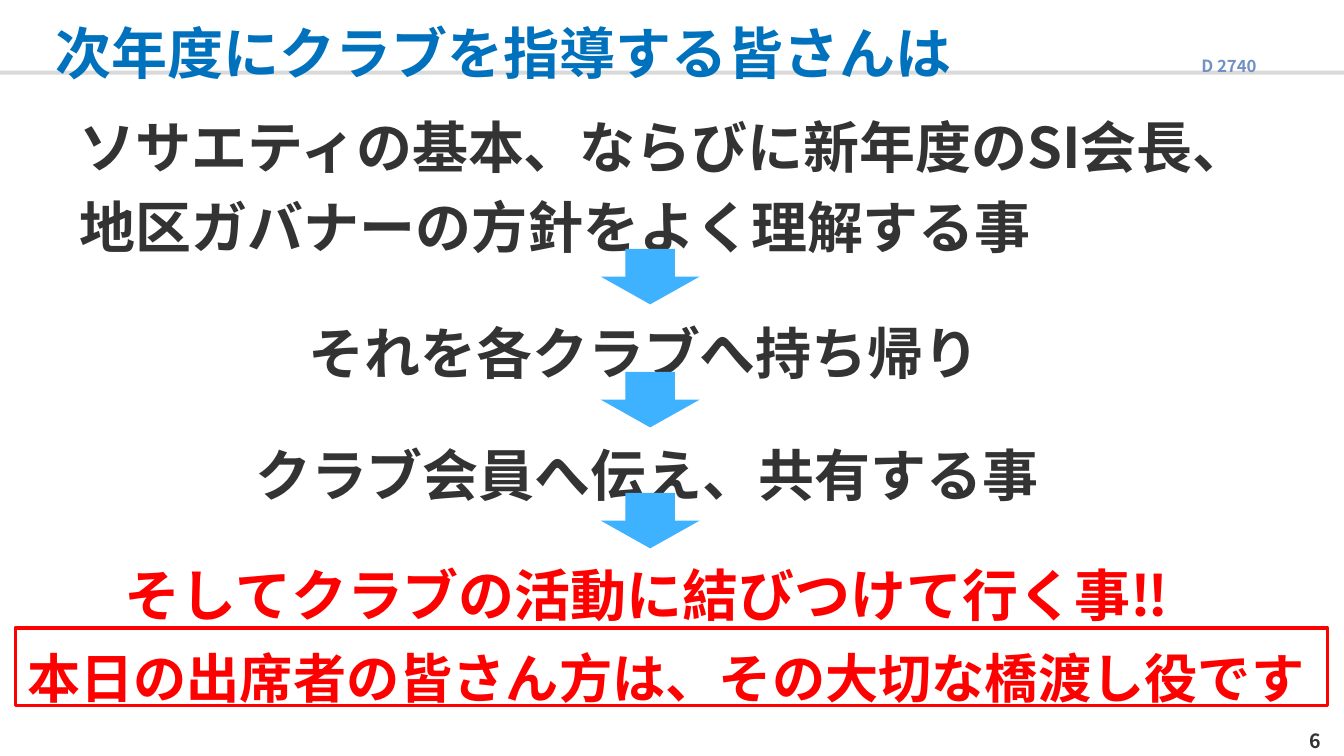
"""Build a slide of four steps joined by arrows, closed by a framed message."""
from lxml.etree import SubElement
from pptx import Presentation
from pptx.dml.color import RGBColor
from pptx.enum.shapes import MSO_SHAPE as Shape
from pptx.enum.text import MSO_ANCHOR as Anchor, PP_ALIGN as Align
from pptx.oxml.ns import qn
from pptx.util import Pt

FONT = "Noto Sans CJK JP"
BLUE, DARK, RED = "0071BC", "333333", "FF0000"
STEPS = [
    ((57, 67, 851, 116.6),
     ["ソサエティの基本、ならびに新年度のSI会長、", "地区ガバナーの方針をよく理解する事"], DARK),
    ((220.3, 214.6, 522.7, 55.4), ["それを各クラブへ持ち帰り"], DARK),
    ((182.2, 301.7, 599, 55.4), ["クラブ会員へ伝え、共有する事"], DARK),
    ((89.3, 387.4, 780.5, 55.4), ["そしてクラブの活動に結びつけて行く事‼"], RED),
]
ARROW_LEFT, ARROW_WIDTH, ARROW_HEIGHT = 429.1, 70.6, 39.6
ARROW_TOPS = [177.8, 265.7, 352.1]


def color(value):
    return RGBColor.from_string(value)


def add_run(paragraph, text, size, text_color):
    run = paragraph.add_run()
    run.text = text
    font = run.font
    font.size, font.bold, font.name = Pt(size), True, FONT
    font.color.rgb = color(text_color)
    SubElement(run._r.get_or_add_rPr(), qn("a:ea")).set("typeface", FONT)


def add_filled(slide, kind, box, fill):
    shape = slide.shapes.add_shape(kind, *map(Pt, box))
    shape.shadow.inherit = False
    shape.fill.solid()
    shape.fill.fore_color.rgb = color(fill)
    shape.line.fill.background()


def add_statement(slide, box, lines, size, text_color, indent=0, border=None):
    shape = slide.shapes.add_shape(Shape.ROUNDED_RECTANGLE, *map(Pt, box))
    shape.adjustments[0] = 0
    shape.shadow.inherit = False
    shape.fill.background()
    if border:
        shape.line.color.rgb = color(border)
        shape.line.width = Pt(2.25)
    else:
        shape.line.fill.background()
    frame = shape.text_frame
    frame.word_wrap = True
    frame.vertical_anchor = Anchor.TOP
    frame.margin_left, frame.margin_top = Pt(indent), Pt(3.5)
    frame.margin_right = frame.margin_bottom = 0
    for index, line in enumerate(lines):
        paragraph = frame.add_paragraph() if index else frame.paragraphs[0]
        paragraph.alignment = Align.JUSTIFY
        paragraph.line_spacing = Pt(size * 1.44)
        add_run(paragraph, line, size, text_color)


def add_label(slide, box, text, size, text_color, align, margins):
    frame = slide.shapes.add_textbox(*map(Pt, box)).text_frame
    frame.word_wrap = False
    frame.margin_left = frame.margin_right = Pt(margins[0])
    frame.margin_top = frame.margin_bottom = Pt(margins[1])
    frame.vertical_anchor = Anchor.TOP if margins[1] else Anchor.MIDDLE
    frame.paragraphs[0].alignment = align
    add_run(frame.paragraphs[0], text, size, text_color)


def add_header(slide, box):
    left, top, width, height = box
    add_filled(slide, Shape.RECTANGLE, (left, top + 50.4, width, 2.9), "D9D9D9")
    add_statement(slide, (left, top, 686.9, height),
                  ["次年度にクラブを指導する皆さんは"], 40, BLUE, indent=40)
    add_label(slide, (left + 851, top + 36, 55.4, 21.6), "D 2740", 12,
              "7191C2", Align.LEFT, (7.2, 3.6))


def add_steps(slide):
    for box, lines, text_color in STEPS:
        add_statement(slide, box, lines, 40, text_color)


def add_arrows(slide):
    for top in ARROW_TOPS:
        add_filled(slide, Shape.DOWN_ARROW,
                   (ARROW_LEFT, top, ARROW_WIDTH, ARROW_HEIGHT), "3EB2FF")


def main():
    presentation = Presentation()
    presentation.slide_width, presentation.slide_height = Pt(960), Pt(540)
    slide = presentation.slides.add_slide(presentation.slide_layouts[6])
    add_header(slide, (0, 0, 960, 58.3))
    add_steps(slide)
    add_statement(slide, (10.8, 448.6, 937.4, 55.4),
                  ["本日の出席者の皆さん方は、その大切な橋渡し役です"],
                  38, RED, indent=8.5, border=RED)
    add_arrows(slide)
    add_label(slide, (907.9, 519.1, 36, 20.2), "6", 14, DARK, Align.RIGHT, (0, 0))
    presentation.save("out.pptx")


if __name__ == "__main__":
    main()
